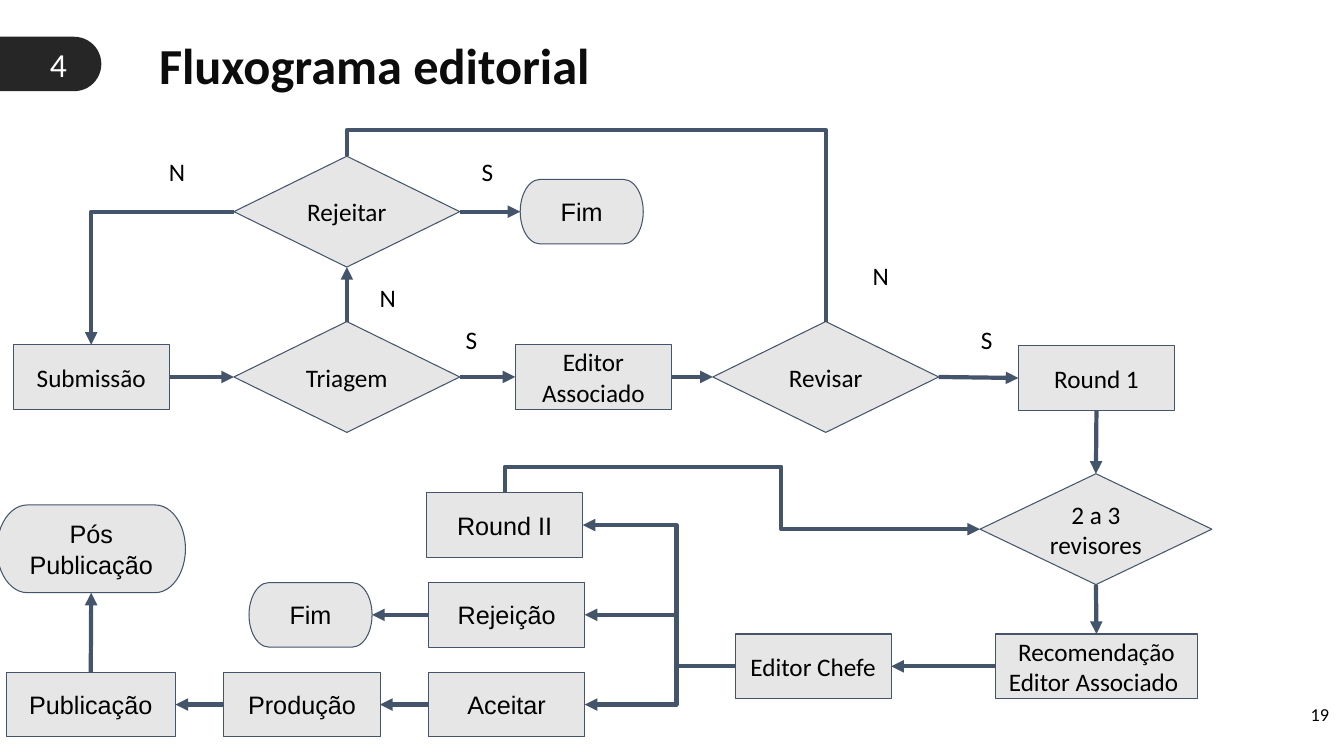
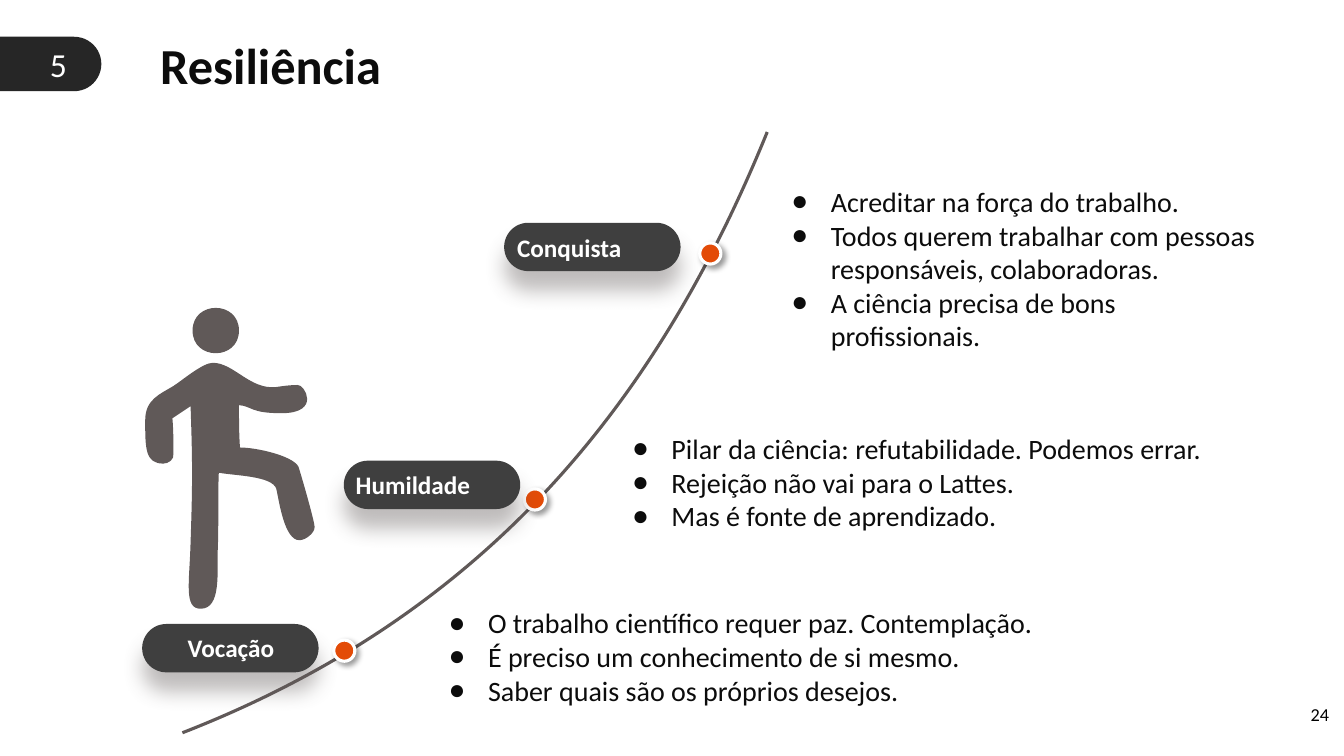
"""Build the editorial flowchart and resilience slides."""
from dataclasses import dataclass
from typing import NamedTuple, Optional

from lxml.etree import SubElement
from pptx import Presentation
from pptx.dml.color import RGBColor
from pptx.enum.shapes import MSO_CONNECTOR, MSO_SHAPE
from pptx.enum.text import MSO_ANCHOR, MSO_AUTO_SIZE, PP_ALIGN
from pptx.oxml.ns import qn
from pptx.util import Emu, Pt

EMU_PER_PX = 9144
WHITE = RGBColor(0xFF, 0xFF, 0xFF)
BLACK = RGBColor(0x00, 0x00, 0x00)
INK = RGBColor(0x0C, 0x0C, 0x0C)
TAB = RGBColor(0x26, 0x26, 0x26)
PILL = RGBColor(0x3F, 0x3F, 0x3F)
NODE = RGBColor(0xE7, 0xE6, 0xE6)
FLOW = RGBColor(0x44, 0x54, 0x6A)
TAUPE = RGBColor(0x60, 0x59, 0x58)
ORANGE = RGBColor(0xE3, 0x4B, 0x07)

PROCESS = MSO_SHAPE.FLOWCHART_PROCESS
DECISION = MSO_SHAPE.FLOWCHART_DECISION
TERMINATOR = MSO_SHAPE.FLOWCHART_TERMINATOR
BOX = MSO_SHAPE.RECTANGLE
TOP, LEFT, BOTTOM, RIGHT = range(4)


class Area(NamedTuple):
    left: int
    top: int
    width: int
    height: int


class TextStyle(NamedTuple):
    size: int
    color: RGBColor = BLACK
    bold: bool = False
    font: str = "Calibri"
    align: PP_ALIGN = PP_ALIGN.CENTER


class Shadow(NamedTuple):
    color: RGBColor
    blur: int
    distance: int
    degrees: int


@dataclass(frozen=True)
class Step:
    text: str
    kind: MSO_SHAPE
    area: Area
    font: str = "Calibri"


@dataclass(frozen=True)
class Flow:
    source: str
    exit: int
    target: str
    entry: int
    bend: str = ""
    adjusts: tuple[int, ...] = ()
    rotation: int = 0
    arrow: bool = True


@dataclass(frozen=True)
class Milestone:
    name: str
    pill: Area
    name_area: Area
    align: PP_ALIGN
    dot: Area
    list_area: Area
    lessons: tuple[str, ...]


STEPS = {
    "submission": Step("Submissão", PROCESS, Area(13, 342, 155, 64)),
    "end": Step("Fim", TERMINATOR, Area(516, 178, 122, 64), "Arial"),
    "associate": Step("Editor Associado", PROCESS, Area(511, 342, 155, 64)),
    "triage": Step("Triagem", DECISION, Area(232, 319, 224, 110)),
    "reject": Step("Rejeitar", DECISION, Area(232, 155, 224, 110)),
    "review": Step("Revisar", DECISION, Area(707, 319, 224, 110)),
    "round_1": Step("Round 1", PROCESS, Area(1010, 343, 155, 64)),
    "reviewers": Step("2 a 3 revisores", DECISION, Area(972, 470, 230, 110)),
    "advice": Step("Recomendação Editor Associado ", PROCESS, Area(987, 629, 201, 64)),
    "chief": Step("Editor Chefe", PROCESS, Area(729, 629, 155, 64)),
    "rejection": Step("Rejeição", BOX, Area(425, 578, 155, 64), "Arial"),
    "accept": Step("Aceitar", BOX, Area(425, 667, 155, 64), "Arial"),
    "round_2": Step("Round II", BOX, Area(423, 489, 155, 64), "Arial"),
    "rejected_end": Step("Fim", TERMINATOR, Area(247, 578, 122, 64), "Arial"),
    "production": Step("Produção", BOX, Area(222, 667, 155, 64), "Arial"),
    "publication": Step("Publicação", BOX, Area(6, 667, 168, 64), "Arial"),
    "after": Step("Pós\nPublicação", TERMINATOR, Area(-3, 501, 187, 87), "Arial"),
}

FLOWS = (
    Flow("submission", RIGHT, "triage", LEFT),
    Flow("triage", RIGHT, "associate", LEFT),
    Flow("triage", TOP, "reject", BOTTOM),
    Flow("reject", RIGHT, "end", LEFT),
    Flow("reject", LEFT, "submission", TOP, "bentConnector2"),
    Flow("associate", RIGHT, "review", LEFT),
    Flow("review", TOP, "reject", TOP, "bentConnector3", (115800,), 90, False),
    Flow("review", RIGHT, "round_1", LEFT),
    Flow("round_1", BOTTOM, "reviewers", TOP),
    Flow("reviewers", BOTTOM, "advice", TOP),
    Flow("advice", LEFT, "chief", RIGHT),
    Flow("chief", LEFT, "rejection", RIGHT, "bentConnector3", (39000,)),
    Flow("chief", LEFT, "accept", RIGHT, "bentConnector3", (39000,)),
    Flow("chief", LEFT, "round_2", RIGHT, "bentConnector3", (38400,)),
    Flow("round_2", TOP, "reviewers", LEFT, "bentConnector4", (-72000, 58200), 270),
    Flow("rejection", LEFT, "rejected_end", RIGHT),
    Flow("accept", LEFT, "production", RIGHT),
    Flow("production", LEFT, "publication", RIGHT),
    Flow("publication", TOP, "after", BOTTOM),
)

ANSWERS = (("S", 435, 322), ("N", 352, 280), ("N", 143, 155),
           ("S", 451, 155), ("S", 946, 322), ("N", 841, 258))

MILESTONES = (
    Milestone("Vocação", Area(141, 619, 175, 48), Area(114, 622, 230, 51),
              PP_ALIGN.CENTER, Area(331, 635, 21, 21), Area(424, 596, 844, 118),
              ("O trabalho científico requer paz. Contemplação.",
               "É preciso um conhecimento de si mesmo.",
               "Saber quais são os próprios desejos.")),
    Milestone("Humildade", Area(341, 457, 175, 48), Area(343, 461, 178, 51),
              PP_ALIGN.LEFT, Area(520, 485, 21, 21), Area(606, 423, 648, 117),
              ("Pilar da ciência: refutabilidade. Podemos errar.",
               "Rejeição não vai para o Lattes.",
               "Mas é fonte de aprendizado.")),
    Milestone("Conquista", Area(500, 221, 175, 48), Area(503, 226, 190, 50),
              PP_ALIGN.LEFT, Area(694, 241, 21, 21), Area(764, 178, 507, 145),
              ("Acreditar na força do trabalho.",
               "Todos querem trabalhar com pessoas responsáveis, colaboradoras.",
               "A ciência precisa de bons profissionais.")),
)

ASCENT = ((181, 727), (489, 607), (655, 392), (761, 131))
WALKER_HEAD = ((191, 328), (191, 358), (237, 358), (237, 328),
               (237, 298), (191, 298), (191, 328))
WALKER_BODY = (
    (144, 417), (144, 445), (144, 460), (162, 460), (167, 460), (173, 456), (172, 450),
    (172, 438), (172, 427), (171, 415), (177, 411), (183, 407), (189, 403),
    (191, 460), (191, 480), (189, 538), (188, 578), (182, 604), (199, 604),
    (220, 604), (215, 566), (216, 545), (217, 520), (216, 492), (217, 469),
    (232, 472), (270, 472), (274, 485), (277, 498), (282, 536), (297, 536),
    (303, 536), (312, 529), (312, 523), (312, 517), (298, 469), (296, 463),
    (290, 452), (254, 444), (238, 444), (237, 430), (237, 416), (237, 402),
    (250, 403), (248, 410), (279, 410), (319, 410), (302, 381), (295, 382),
    (288, 382), (281, 383), (274, 384), (248, 387), (232, 360), (211, 360),
    (201, 360), (180, 378), (172, 383), (159, 391), (144, 396), (144, 417),
)


def px(length: int) -> Emu:
    """Turn px into EMU."""
    return Emu(length * EMU_PER_PX)


def place(area: Area) -> tuple[Emu, ...]:
    """Give an area in EMU."""
    return tuple(px(length) for length in area)


def write(frame, lines, style: TextStyle, inset=(10, 5), anchor=MSO_ANCHOR.TOP) -> None:
    """Fill a text frame with one paragraph per line."""
    frame.word_wrap = True
    frame.auto_size = MSO_AUTO_SIZE.NONE
    frame.vertical_anchor = anchor
    frame.margin_left = frame.margin_right = px(inset[0])
    frame.margin_top = frame.margin_bottom = px(inset[1])
    for index, line in enumerate(lines):
        paragraph = frame.add_paragraph() if index else frame.paragraphs[0]
        paragraph.alignment = style.align
        paragraph.space_before = Pt(0)
        run = paragraph.add_run()
        run.text = line
        run.font.name, run.font.size = style.font, Pt(style.size)
        run.font.bold, run.font.color.rgb = style.bold, style.color


def add_label(slide, text: str, area: Area, style: TextStyle, inset=(10, 5)) -> None:
    """Add a one-line text box."""
    write(slide.shapes.add_textbox(*place(area)).text_frame, [text], style, inset)


def paint(shape, fill: Optional[RGBColor], line: Optional[RGBColor] = None,
          width: float = 0, shadow: Optional[Shadow] = None) -> None:
    """Set the fill, outline and shadow of a shape."""
    shape.shadow.inherit = False
    if fill is None:
        shape.fill.background()
    else:
        shape.fill.solid()
        shape.fill.fore_color.rgb = fill
    if line is None:
        shape.line.fill.background()
    else:
        shape.line.color.rgb = line
        shape.line.width = Pt(width)
    if shadow:
        effects = shape.element.spPr.find(qn("a:effectLst"))
        outer = SubElement(effects, qn("a:outerShdw"), blurRad=str(Pt(shadow.blur)),
                           dist=str(Pt(shadow.distance)), dir=str(shadow.degrees * 60000),
                           algn="ctr", rotWithShape="0")
        color = SubElement(outer, qn("a:srgbClr"), val=str(shadow.color))
        SubElement(color, qn("a:alpha"), val="40000")


def add_master_veil(deck, slide) -> None:
    """Lay a translucent white sheet on the slide master."""
    veil = slide.shapes.add_shape(BOX, *place(Area(1, 0, 1332, 750)))
    paint(veil, WHITE)
    color = veil.element.spPr.find(qn("a:solidFill")).find(qn("a:srgbClr"))
    SubElement(color, qn("a:alpha"), val="93000")
    deck.slide_master.element.cSld.spTree.insert(2, veil.element)


def start_slide(deck, layout: int, section: str, title: str, title_width: int, page: str):
    """Add a slide with its section tab, title and page number."""
    slide = deck.slides.add_slide(deck.slide_layouts[layout])
    tab = slide.shapes.add_shape(MSO_SHAPE.ROUND_2_SAME_RECTANGLE,
                                 *place(Area(23, 13, 54, 101)))
    tab.rotation = 90
    tab.adjustments[0], tab.adjustments[1] = 0.5, 0
    paint(tab, TAB)
    add_label(slide, section, Area(23, 39, 70, 50), TextStyle(24, WHITE))
    heading = slide.shapes.title
    heading.left, heading.top, heading.width, heading.height = place(
        Area(105, 29, title_width, 71))
    write(heading.text_frame, [title], TextStyle(36, INK, True))
    add_label(slide, page, Area(1248, 693, 80, 57), TextStyle(13, align=PP_ALIGN.RIGHT))
    return slide


def add_step(slide, step: Step):
    """Add one flowchart step."""
    shape = slide.shapes.add_shape(step.kind, *place(step.area))
    paint(shape, NODE, FLOW, 0.75)
    write(shape.text_frame, step.text.split("\n"), TextStyle(18, font=step.font),
          (10, 10), MSO_ANCHOR.MIDDLE)
    return shape


def add_flow(slide, flow: Flow, steps: dict) -> None:
    """Join two steps with a straight or bent connector."""
    kind = MSO_CONNECTOR.ELBOW if flow.bend else MSO_CONNECTOR.STRAIGHT
    connector = slide.shapes.add_connector(kind, 0, 0, 0, 0)
    connector.begin_connect(steps[flow.source], flow.exit)
    connector.end_connect(steps[flow.target], flow.entry)
    connector.line.color.rgb = FLOW
    connector.line.width = Pt(3)
    properties = connector.element.spPr
    if flow.arrow:
        SubElement(properties.find(qn("a:ln")), qn("a:tailEnd"), type="triangle")
    SubElement(properties, qn("a:effectLst"))
    if flow.bend:
        geometry = properties.find(qn("a:prstGeom"))
        geometry.set("prst", flow.bend)
        for number, value in enumerate(flow.adjusts, 1):
            SubElement(geometry.find(qn("a:avLst")), qn("a:gd"),
                       name=f"adj{number}", fmla=f"val {value}")
    if flow.rotation:
        width, height = connector.width, connector.height
        connector.left = Emu(connector.left + (width - height) // 2)
        connector.top = Emu(connector.top + (height - width) // 2)
        connector.width, connector.height = height, width
        connector.rotation = flow.rotation
        frame = properties.find(qn("a:xfrm"))
        frame.set("flipH", "1")
        frame.set("flipV", "0")


def add_curves(slide, outlines, closed: bool):
    """Add one freeform whose outlines are chained cubic curves."""
    builder = slide.shapes.build_freeform(*map(px, outlines[0][0]))
    for index, outline in enumerate(outlines):
        points = [tuple(map(px, point)) for point in outline]
        if index:
            builder.move_to(*points[0])
        builder.add_line_segments(points[1:], close=closed)
    shape = builder.convert_to_shape()
    segments = list(shape.element.spPr.iter(qn("a:lnTo")))
    for first in range(0, len(segments), 3):
        curve = segments[first]
        for segment in segments[first + 1:first + 3]:
            curve.append(segment[0])
            segment.getparent().remove(segment)
        curve.tag = qn("a:cubicBezTo")
    return shape


def fill_list(body, milestone: Milestone) -> None:
    """Write the bulleted lessons of a milestone."""
    body.left, body.top, body.width, body.height = place(milestone.list_area)
    write(body.text_frame, milestone.lessons, TextStyle(20, INK, align=PP_ALIGN.LEFT))
    for paragraph in body.text_frame.paragraphs:
        properties = paragraph._p.get_or_add_pPr()
        properties.set("marL", str(px(50)))
        properties.set("indent", str(px(-39)))
        SubElement(SubElement(properties, qn("a:buClr")), qn("a:srgbClr"), val=str(INK))
        SubElement(properties, qn("a:buChar"), char="●")


def add_milestone(slide, milestone: Milestone) -> None:
    """Add the dot and the named pill of a milestone."""
    dot = slide.shapes.add_shape(MSO_SHAPE.OVAL, *place(milestone.dot))
    paint(dot, ORANGE, WHITE, 2.25, Shadow(BLACK, 4, 3, 45))
    pill = slide.shapes.add_shape(MSO_SHAPE.ROUNDED_RECTANGLE, *place(milestone.pill))
    pill.adjustments[0] = 0.5
    paint(pill, PILL, shadow=Shadow(TAUPE, 15, 14, 90))
    add_label(slide, milestone.name, milestone.name_area,
              TextStyle(18, WHITE, True, align=milestone.align))


def build_flowchart(deck) -> None:
    """Build the editorial flowchart slide."""
    slide = start_slide(deck, 5, "4", "Fluxograma editorial", 533, "19")
    add_master_veil(deck, slide)
    steps = {key: add_step(slide, step) for key, step in STEPS.items()}
    for flow in FLOWS:
        add_flow(slide, flow, steps)
    for answer, left, top in ANSWERS:
        add_label(slide, answer, Area(left, top, 65, 37), TextStyle(18), (0, 0))


def build_resilience(deck) -> None:
    """Build the resilience slide."""
    slide = start_slide(deck, 4, "5", "Resiliência", 327, "24")
    paint(add_curves(slide, (WALKER_BODY, WALKER_HEAD), True), TAUPE)
    paint(add_curves(slide, (ASCENT,), False), None, TAUPE, 2.25)
    for number, milestone in enumerate(MILESTONES, 1):
        add_milestone(slide, milestone)
        fill_list(slide.placeholders[number], milestone)
    spare = slide.placeholders[4].element
    spare.getparent().remove(spare)


def main() -> None:
    """Build and save the deck."""
    deck = Presentation()
    deck.slide_width, deck.slide_height = px(1333), px(750)
    build_flowchart(deck)
    build_resilience(deck)
    deck.save("out.pptx")


if __name__ == "__main__":
    main()
